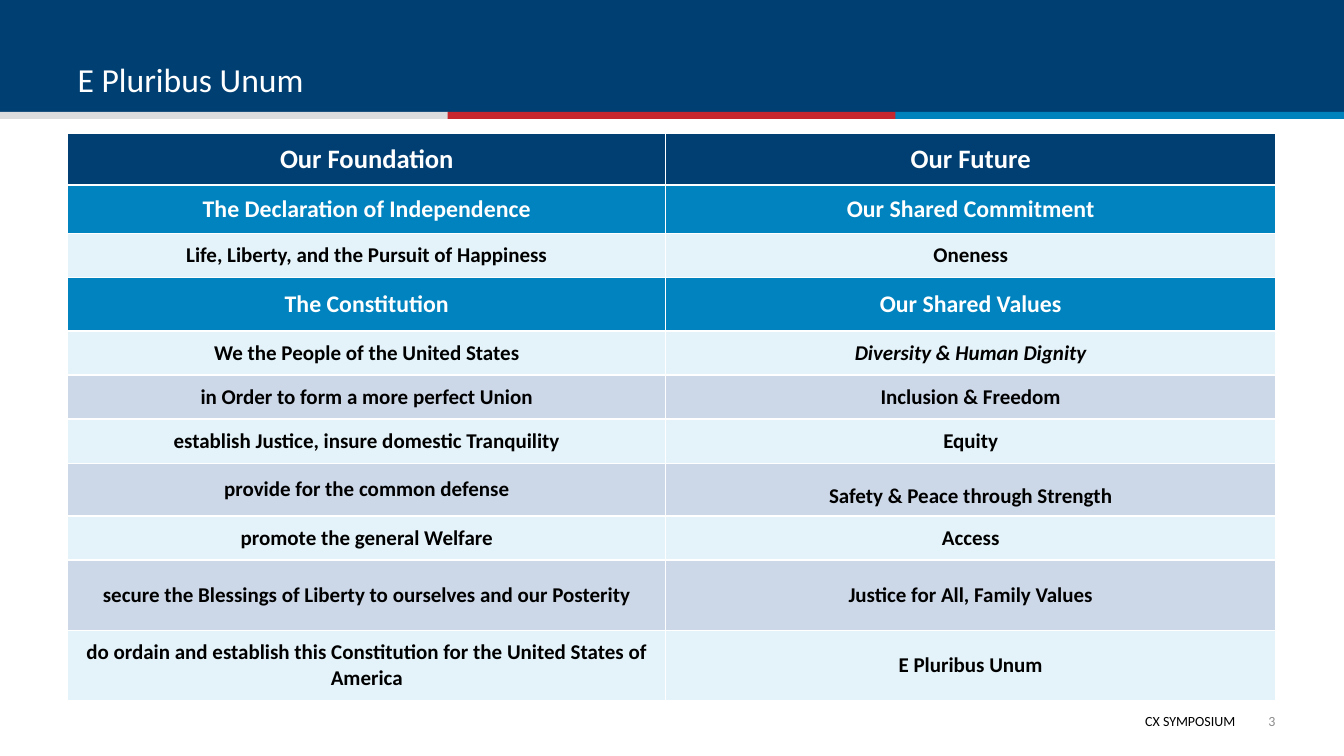
from lxml import etree
from pptx import Presentation
from pptx.dml.color import RGBColor
from pptx.enum.shapes import MSO_SHAPE as Shape
from pptx.enum.text import MSO_ANCHOR as Anchor, MSO_AUTO_SIZE as AutoSize, PP_ALIGN as Align
from pptx.oxml.ns import qn
from pptx.util import Cm, Pt

COLORS = {
    "navy": "003F72", "header": "013F72", "blue": "0082BD", "section": "0083BE",
    "red": "C6262D", "silver": "DBDCDE", "light": "E4F3F9", "dark": "CCD8E8",
    "white": "FFFFFF", "black": "000000", "gray": "8C8C8C",
}
# Row style: fill, text color, text size
STYLES = {
    "header": ("header", "white", 19),
    "section": ("section", "white", 17),
    "light": ("light", "black", 15),
    "dark": ("dark", "black", 15),
}
# Row: style, height in cm, foundation, future
ROWS = [
    ("header", 1.3, "Our Foundation", "Our Future"),
    ("section", 1.23, "The Declaration of Independence", "Our Shared Commitment"),
    ("light", 1.11, "Life, Liberty, and the Pursuit of Happiness", "Oneness"),
    ("section", 1.34, "The Constitution", "Our Shared Values"),
    ("light", 1.11, "We the People of the United States", "Diversity & Human Dignity"),
    ("dark", 1.11, "in Order to form a more perfect Union", "Inclusion & Freedom"),
    ("light", 1.11, "establish Justice, insure domestic Tranquility", "Equity"),
    ("dark", 1.33, "provide for the common defense", "Safety & Peace through Strength"),
    ("light", 1.11, "promote the general Welfare", "Access"),
    ("dark", 1.77, "secure the Blessings of Liberty to ourselves and our Posterity",
     "Justice for All, Family Values"),
    ("light", 1.77,
     "do ordain and establish this Constitution for the United States of America",
     "E Pluribus Unum"),
]
COLUMN_WIDTHS = (15.06, 15.37)
ITALIC_TEXT = "Diversity & Human Dignity"
SPACED_TEXT = "Safety & Peace through Strength"


def rgb(name):
    return RGBColor.from_string(COLORS[name])


def place(shape, left, top, width, height):
    shape.left, shape.top, shape.width, shape.height = map(Cm, (left, top, width, height))


def add_run(paragraph, text, size, color, bold=False, italic=False):
    run = paragraph.add_run()
    run.text = text
    font = run.font
    font.name, font.size, font.bold, font.italic = "Calibri", Pt(size), bold, italic
    font.color.rgb = rgb(color)


def add_bar(slide, left, top, width, height, color):
    bar = slide.shapes.add_shape(Shape.RECTANGLE, *map(Cm, (left, top, width, height)))
    bar.shadow.inherit = False
    bar.fill.solid()
    bar.fill.fore_color.rgb = rgb(color)
    bar.line.fill.background()


def add_banner(slide):
    add_bar(slide, 0, 0, 33.86, 2.9, "navy")
    for index, color in enumerate(("silver", "red", "blue")):
        add_bar(slide, index * 11.28, 2.82, 11.3, 0.18, color)


def format_title(slide, text):
    title = slide.shapes.title
    place(title, 1.7, 0.36, 30.48, 2.26)
    frame = title.text_frame
    frame.auto_size = AutoSize.NONE
    frame.vertical_anchor = Anchor.BOTTOM
    paragraph = frame.paragraphs[0]
    paragraph.alignment = Align.LEFT
    add_run(paragraph, text, 24, "white")
    # Bring the title in front of the banner
    title.element.getparent().append(title.element)


def add_right_text(slide, box, text, color):
    shape = slide.shapes.add_textbox(*map(Cm, box))
    frame = shape.text_frame
    frame.word_wrap = True
    paragraph = frame.paragraphs[0]
    paragraph.alignment = Align.RIGHT
    add_run(paragraph, text, 10, color)
    return frame


def add_footer(slide):
    add_right_text(slide, (14, 17.83, 17.37, 0.68), "CX SYMPOSIUM", "black")
    number = add_right_text(slide, (31.22, 17.65, 0.91, 1.02), "3", "gray")
    number.margin_left = number.margin_right = number.margin_top = number.margin_bottom = 0
    number.vertical_anchor = Anchor.MIDDLE


def set_borders(cell):
    properties = cell._tc.get_or_add_tcPr()
    for position, side in enumerate(("lnL", "lnR", "lnT", "lnB")):
        line = etree.Element(qn(f"a:{side}"), w=str(Pt(1)))
        fill = etree.SubElement(line, qn("a:solidFill"))
        etree.SubElement(fill, qn("a:srgbClr"), val=COLORS["white"])
        properties.insert(position, line)


def fill_cell(cell, text, style):
    fill, color, size = STYLES[style]
    cell.fill.solid()
    cell.fill.fore_color.rgb = rgb(fill)
    cell.vertical_anchor = Anchor.MIDDLE
    cell.margin_left = cell.margin_right = Cm(0.3)
    cell.margin_top = cell.margin_bottom = Cm(0.15)
    set_borders(cell)
    paragraph = cell.text_frame.paragraphs[0]
    paragraph.alignment = Align.CENTER
    if text == SPACED_TEXT:
        paragraph.line_spacing = 1.5
    add_run(paragraph, text, size, color, bold=True, italic=text == ITALIC_TEXT)


def add_values_table(slide):
    frame = slide.shapes.add_table(len(ROWS), len(COLUMN_WIDTHS),
                                   *map(Cm, (1.71, 3.36, 30.43, 14.29)))
    table = frame.table
    for column, width in zip(table.columns, COLUMN_WIDTHS):
        column.width = Cm(width)
    for row, (style, height, *texts) in zip(table.rows, ROWS):
        row.height = Cm(height)
        for cell, text in zip(row.cells, texts):
            fill_cell(cell, text, style)


def main():
    presentation = Presentation()
    presentation.slide_width, presentation.slide_height = Cm(33.86), Cm(19.05)
    slide = presentation.slides.add_slide(presentation.slide_layouts[5])
    add_banner(slide)
    format_title(slide, "E Pluribus Unum")
    add_footer(slide)
    add_values_table(slide)
    presentation.save("out.pptx")


if __name__ == "__main__":
    main()
